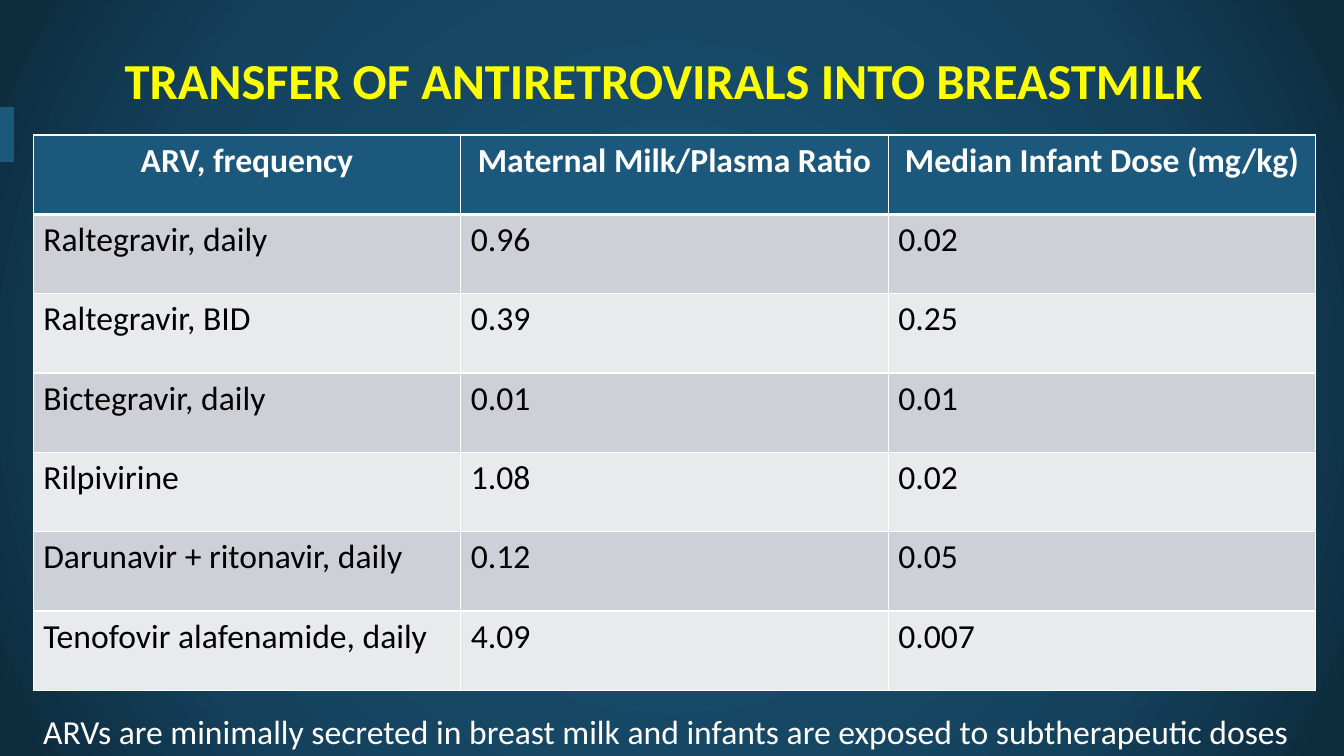
import pptx
import pptx.dml.color
import pptx.enum.shapes
import pptx.enum.text
import pptx.oxml
import pptx.oxml.ns
import pptx.util
from dataclasses import dataclass
from lxml import etree

Inches = pptx.util.Inches
ALIGN = pptx.enum.text.PP_ALIGN
ANCHOR = pptx.enum.text.MSO_ANCHOR

TITLE = "TRANSFER OF ANTIRETROVIRALS INTO BREASTMILK"
HEADER = ("ARV, frequency", "Maternal Milk/Plasma Ratio", "Median Infant Dose (mg/kg)")
DRUGS = [
    ("Raltegravir, daily", "0.96", "0.02"),
    ("Raltegravir, BID", "0.39", "0.25"),
    ("Bictegravir, daily", "0.01", "0.01"),
    ("Rilpivirine", "1.08", "0.02"),
    ("Darunavir + ritonavir, daily", "0.12", "0.05"),
    ("Tenofovir alafenamide, daily", "4.09", "0.007"),
]
TAKEAWAY = ("ARVs are minimally secreted in breast milk and infants are exposed "
            "to subtherapeutic doses")


@dataclass(frozen=True)
class Theme:
    font: str = "Calibri"
    title_size: int = 36
    text_size: int = 24
    title: str = "FFFF00"
    light: str = "FFFFFF"
    dark: str = "000000"
    accent: str = "1B587C"
    bands: tuple = ("CDD1D7", "E8EAEC")
    backdrop: tuple = ((0, "184E6E"), (23, "184E6E"), (69, "14425D"), (97, "0E2C3E"))
    grid_width: int = 1
    header_rule_width: int = 3
    accent_width: int = 10


THEME = Theme()


def rgb(color):
    return pptx.dml.color.RGBColor.from_string(color)


def write(frame, text, size, color, bold=False, align=ALIGN.LEFT):
    frame.text = text
    para = frame.paragraphs[0]
    para.alignment = align
    font = para.runs[0].font
    font.name, font.size, font.bold = THEME.font, pptx.util.Pt(size), bold
    font.color.rgb = rgb(color)


def set_backdrop(page):
    """Give the page a circular gradient centred on the slide."""
    stops = "".join(f'<a:gs pos="{pos * 1000}"><a:srgbClr val="{color}"/></a:gs>'
                    for pos, color in THEME.backdrop)
    page.background.fill.solid()
    solid = page.element.find(".//" + pptx.oxml.ns.qn("p:bgPr"))[0]
    gradient = pptx.oxml.parse_xml(
        f'<a:gradFill {pptx.oxml.ns.nsdecls("a")} rotWithShape="1"><a:gsLst>{stops}</a:gsLst>'
        '<a:path path="circle"><a:fillToRect l="50000" t="50000" r="50000" b="50000"/></a:path>'
        '</a:gradFill>')
    solid.getparent().replace(solid, gradient)


def set_borders(cell, top, bottom):
    """Draw the four cell edges; top and bottom are widths in points."""
    side = THEME.grid_width
    properties = cell._tc.get_or_add_tcPr()
    for edge, width in (("L", side), ("R", side), ("T", top), ("B", bottom)):
        properties.append(pptx.oxml.parse_xml(
            f'<a:ln{edge} {pptx.oxml.ns.nsdecls("a")} w="{pptx.util.Pt(width)}">'
            f'<a:solidFill><a:srgbClr val="{THEME.light}"/></a:solidFill></a:ln{edge}>'))


def add_accent(page):
    accent = page.shapes.add_connector(pptx.enum.shapes.MSO_CONNECTOR.STRAIGHT,
                                       Inches(0.07), Inches(1.61), Inches(0.07), Inches(1.06))
    accent.line.color.rgb = rgb(THEME.accent)
    accent.line.width = pptx.util.Pt(THEME.accent_width)
    etree.SubElement(accent._element.spPr, pptx.oxml.ns.qn("a:effectLst"))


def add_title(page):
    title = page.shapes.title
    title.left, title.top = Inches(0.12), Inches(0.1)
    title.width, title.height = Inches(12.93), Inches(1.38)
    title.text_frame.vertical_anchor = ANCHOR.MIDDLE
    write(title.text_frame, TITLE, THEME.title_size, THEME.title, True, ALIGN.CENTER)


def add_drug_table(page):
    rows = [HEADER, *DRUGS]
    table = page.shapes.add_table(len(rows), len(HEADER), Inches(0.33), Inches(1.34),
                                  Inches(12.72), Inches(5.51)).table
    thin, thick = THEME.grid_width, THEME.header_rule_width
    for row, values in enumerate(rows):
        is_header = row == 0
        fill = THEME.accent if is_header else THEME.bands[(row - 1) % 2]
        for column, value in enumerate(values):
            cell = table.cell(row, column)
            set_borders(cell, thick if row == 1 else thin, thick if is_header else thin)
            cell.fill.solid()
            cell.fill.fore_color.rgb = rgb(fill)
            write(cell.text_frame, value, THEME.text_size,
                  THEME.light if is_header else THEME.dark, is_header,
                  ALIGN.CENTER if is_header else ALIGN.LEFT)


def add_takeaway(page):
    box = page.shapes.add_textbox(Inches(0.33), Inches(7), Inches(12.85), Inches(0.5))
    box.text_frame.word_wrap = False
    box.text_frame.auto_size = pptx.enum.text.MSO_AUTO_SIZE.SHAPE_TO_FIT_TEXT
    write(box.text_frame, TAKEAWAY, THEME.text_size, THEME.light)


def main():
    deck = pptx.Presentation()
    deck.slide_width, deck.slide_height = Inches(13.33), Inches(7.5)
    page = deck.slides.add_slide(deck.slide_layouts.get_by_name("Title Only"))
    set_backdrop(page)
    add_accent(page)
    add_title(page)
    add_drug_table(page)
    add_takeaway(page)
    deck.save("out.pptx")


if __name__ == "__main__":
    main()
